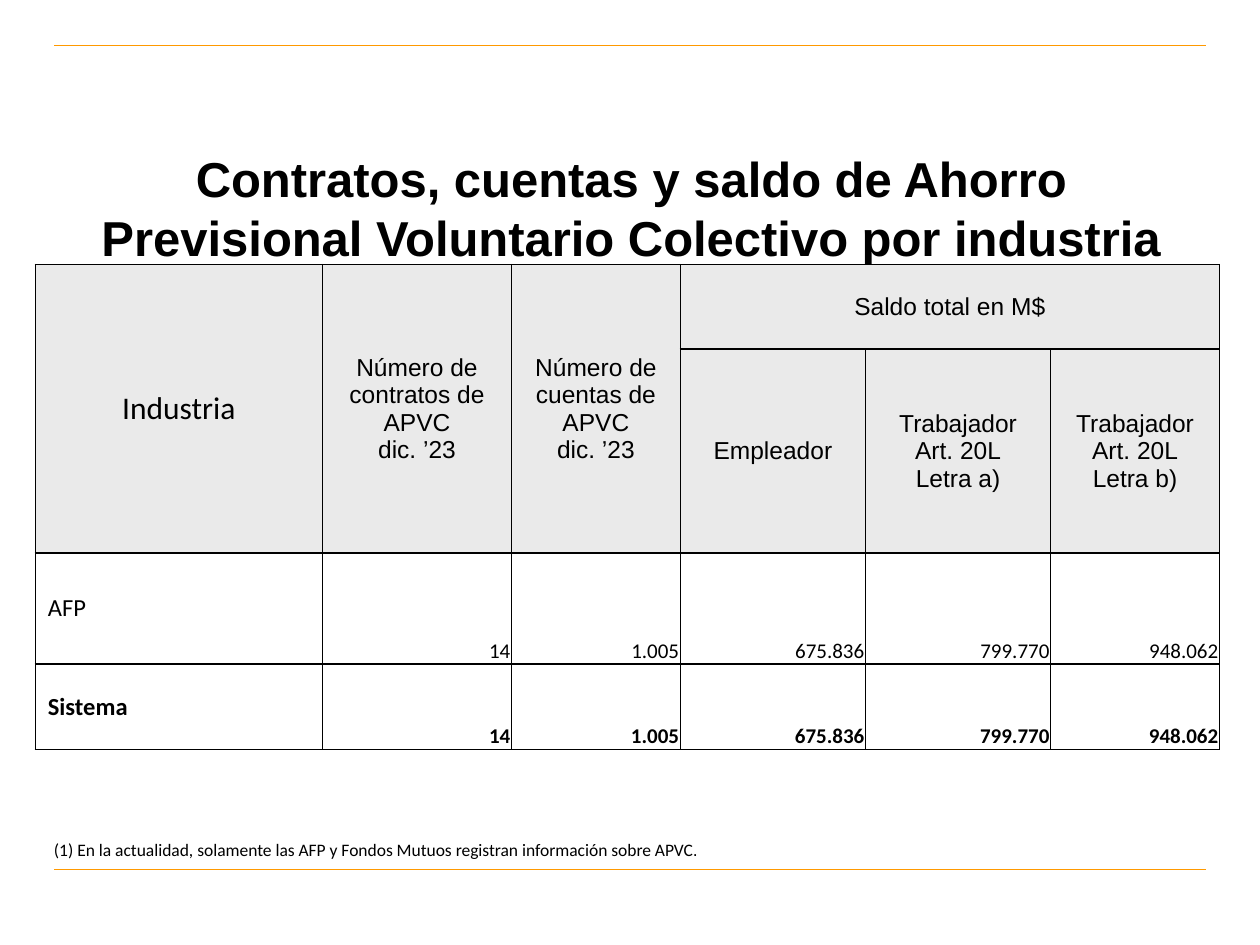
from lxml import etree
from pptx import Presentation
from pptx import util as u
from pptx.dml import color
from pptx.enum import shapes, text
from pptx.oxml import ns

WIDE, HIGH = 10, 7.5
BLACK, WHITE, GREY, GOLD = "000000", "FFFFFF", "EAEAEA", "FF9900"
LEFT, MID, RIGHT = text.PP_ALIGN.LEFT, text.PP_ALIGN.CENTER, text.PP_ALIGN.RIGHT

COLS = [2.28, 1.5, 1.34, 1.47, 1.47, 1.34]
ROWS = [0.67, 1.62, 0.88, 0.68]
# Row, column, rows spanned, columns spanned, lines
HEADS = [
    (0, 0, 2, 1, ["Industria"]),
    (0, 1, 2, 1, ["Número de contratos de APVC", "dic. ’23"]),
    (0, 2, 2, 1, ["Número de cuentas de APVC", "dic. ’23"]),
    (0, 3, 1, 3, ["Saldo total en M$"]),
    (1, 3, 1, 1, ["Empleador"]),
    (1, 4, 1, 1, ["Trabajador", "Art. 20L", "Letra a)"]),
    (1, 5, 1, 1, ["Trabajador", "Art. 20L", "Letra b)"]),
]
DATA = [
    ["AFP", "14", "1.005", "675.836", "799.770", "948.062"],
    ["Sistema", "14", "1.005", "675.836", "799.770", "948.062"],
]


def rgb(code):
    return color.RGBColor.from_string(code)


def add_run(para, words, size, face="Arial", bold=False):
    run = para.add_run()
    run.text = words
    run.font.size, run.font.name, run.font.bold = u.Pt(size), face, bold
    run.font.color.rgb = rgb(BLACK)


def place(item, left, top, width, height):
    item.left, item.top = u.Inches(left), u.Inches(top)
    item.width, item.height = u.Inches(width), u.Inches(height)


def add_rule(slide, top):
    edge = WIDE * 0.043
    line = slide.shapes.add_connector(
        shapes.MSO_CONNECTOR.STRAIGHT, u.Inches(edge), u.Inches(top),
        u.Inches(WIDE - edge), u.Inches(top))
    line.line.color.rgb = rgb(GOLD)
    line.line.width = u.Pt(0.75)
    etree.SubElement(line._element.spPr, ns.qn("a:effectLst"))


def add_title(slide, words):
    title = slide.shapes.title
    place(title, 0.51, 1.16, 9, 1.25)
    frame = title.text_frame
    frame.auto_size = text.MSO_AUTO_SIZE.NONE
    frame.vertical_anchor = text.MSO_ANCHOR.MIDDLE
    frame.margin_bottom = u.Inches(0.33)  # lifts the lines above the table
    para = frame.paragraphs[0]
    para.alignment = MID
    add_run(para, words, 28, bold=True)


def style_cell(cell, fill):
    cell.fill.solid()
    cell.fill.fore_color.rgb = rgb(fill)
    props = cell._tc.get_or_add_tcPr()
    for spot, side in enumerate("LRTB"):
        edge = etree.Element(ns.qn("a:ln" + side), w=str(u.Pt(1)))
        paint = etree.SubElement(edge, ns.qn("a:solidFill"))
        etree.SubElement(paint, ns.qn("a:srgbClr"), val=BLACK)
        props.insert(spot, edge)


def fill_cell(cell, lines, align, size, face="Arial", bold=False):
    frame = cell.text_frame
    for spot, words in enumerate(lines):
        para = frame.add_paragraph() if spot else frame.paragraphs[0]
        para.alignment = align
        add_run(para, words, size, face, bold)
    cell.vertical_anchor = text.MSO_ANCHOR.MIDDLE


def add_grid(slide):
    frame = slide.shapes.add_table(
        len(ROWS), len(COLS), u.Inches(0.28), u.Inches(2.1),
        u.Inches(sum(COLS)), u.Inches(sum(ROWS)))
    table = frame.table
    for col, width in zip(table.columns, COLS):
        col.width = u.Inches(width)
    for row, height in zip(table.rows, ROWS):
        row.height = u.Inches(height)
    for y in range(len(ROWS)):
        for x in range(len(COLS)):
            style_cell(table.cell(y, x), GREY if y < 2 else WHITE)

    # Headings
    for y, x, down, over, lines in HEADS:
        cell = table.cell(y, x)
        if down * over > 1:
            cell.merge(table.cell(y + down - 1, x + over - 1))
        size, face = (18, "Calibri") if x == 0 else (14, "Arial")
        fill_cell(cell, lines, MID, size, face)

    # Figures, with the total row in bold
    for y, (name, *values) in enumerate(DATA, 2):
        bold = name == "Sistema"
        fill_cell(table.cell(y, 0), [name], LEFT, 14, "Calibri", bold)
        for x, value in enumerate(values, 1):
            cell = table.cell(y, x)
            fill_cell(cell, [value], RIGHT, 12, "Calibri", bold)
            cell.vertical_anchor = text.MSO_ANCHOR.BOTTOM
            cell.margin_left = cell.margin_right = u.Inches(0.01)
            cell.margin_top, cell.margin_bottom = u.Inches(0.01), 0


def add_note(slide):
    box = slide.shapes.add_textbox(0, 0, 0, 0)
    place(box, 0.33, 6.61, 9.41, 0.27)
    box.text_frame.word_wrap = True
    box.text_frame.auto_size = text.MSO_AUTO_SIZE.SHAPE_TO_FIT_TEXT
    para = box.text_frame.paragraphs[0]
    add_run(para, "(1) En la actualidad, solamente las AFP y Fondos Mutuos "
            "registran información sobre APVC", 10, "Calibri")
    add_run(para, ".", 10)


def main():
    deck = Presentation()
    deck.slide_width, deck.slide_height = u.Inches(WIDE), u.Inches(HIGH)
    slide = deck.slides.add_slide(deck.slide_layouts[5])
    for share in (0.048, 0.92):
        add_rule(slide, HIGH * share)
    add_title(slide, "Contratos, cuentas y saldo de Ahorro Previsional "
              "Voluntario Colectivo por industria")
    add_grid(slide)
    add_note(slide)
    deck.save("out.pptx")


if __name__ == "__main__":
    main()
